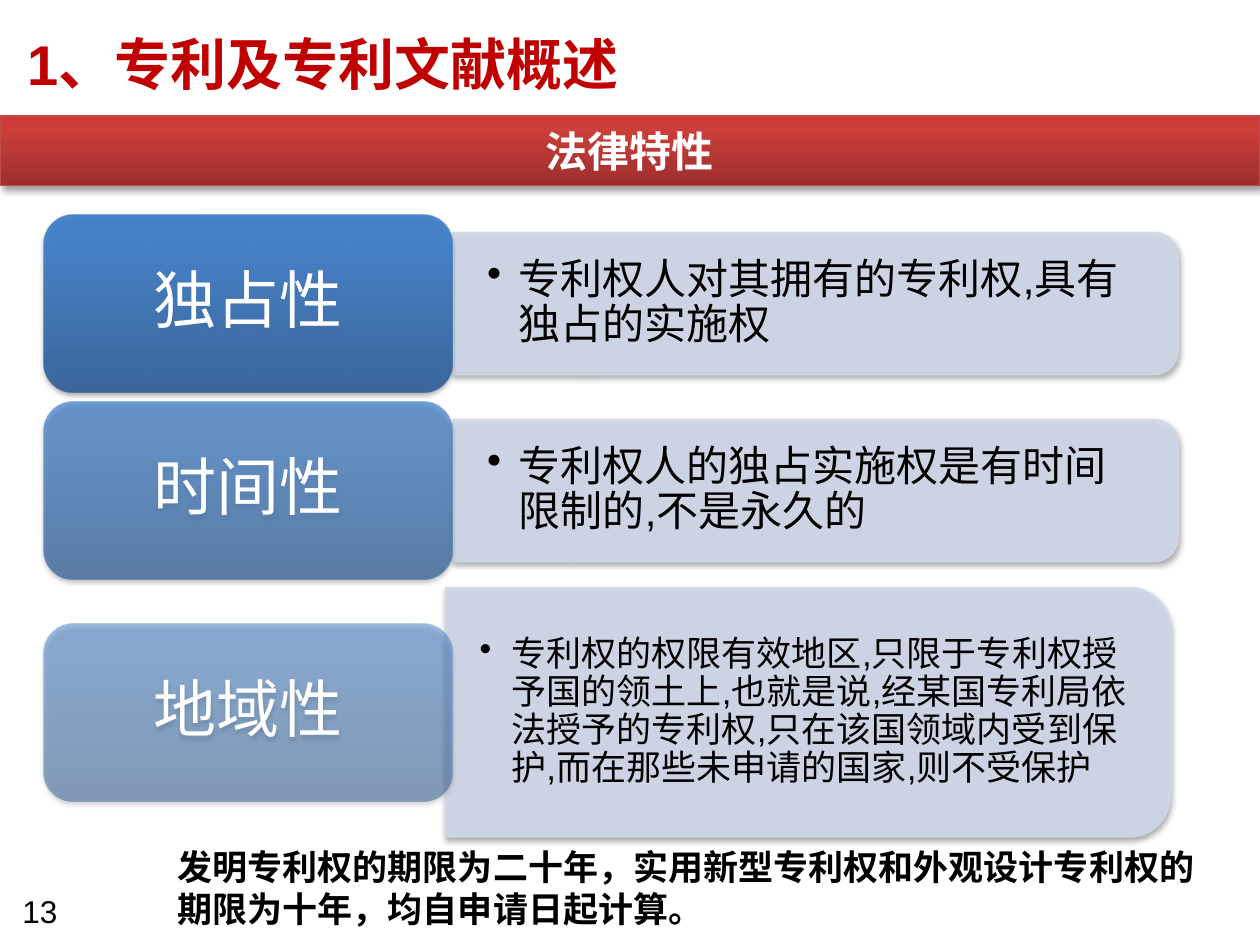
"""Build the slide on the legal traits of patents."""
from lxml import etree
from pptx import Presentation
from pptx.dml.color import RGBColor
from pptx.enum import shapes, text
from pptx.oxml import ns
from pptx.util import Cm, Pt

TITLE = "1、专利及专利文献概述"
BAR = "法律特性"
NOTE = "发明专利权的期限为二十年，实用新型专利权和外观设计专利权的期限为十年，均自申请日起计算。"
PAGE = "13"
ROWS = [
    dict(name="独占性", body="专利权人对其拥有的专利权,具有独占的实施权",
         mid=6.12, left=9.13, high=2.87, size=24, alpha=90),
    dict(name="时间性", body="专利权人的独占实施权是有时间限制的,不是永久的",
         mid=9.89, left=9.13, high=2.87, size=24, alpha=70),
    dict(name="地域性", body="专利权的权限有效地区,只限于专利权授予国的领土上,也就是说,"
         "经某国专利局依法授予的专利权,只在该国领域内受到保护,而在那些未申请的国家,则不受保护",
         mid=14.36, left=8.98, high=5.03, size=20, alpha=50),
]
RED = [(0, "9C2F2D"), (80, "CB3E3A"), (100, "CE3B37")]
BLUE = [(0, "2F5F99"), (80, "3D7CC7"), (100, "3A7CCB")]
PALE = "D0D8E8"
WIDE, TALL = 25.4, 19.05
PANEL = 14.62
LABEL = (0.89, 8.23, 3.58)
SOFT = (3.1, 1.8, 90, 35)
HARD = (4, 3, 45, 40)
CJK = "Noto Sans CJK SC"
KIND = shapes.MSO_SHAPE
MID = text.MSO_ANCHOR.MIDDLE
MAIN = ns.nsdecls("a")


def rgb(code):
    return RGBColor.from_string(code)


def tint(code, alpha):
    return f'<a:srgbClr val="{code}"><a:alpha val="{alpha * 1000}"/></a:srgbClr>'


def node(xml):
    return etree.fromstring(xml)


def shade(shape, stops, alpha=100):
    shape.fill.background()
    old = shape._element.spPr.find(ns.qn("a:noFill"))
    gs = "".join(f'<a:gs pos="{pos * 1000}">{tint(code, alpha)}</a:gs>'
                 for pos, code in stops)
    old.getparent().replace(old, node(
        f'<a:gradFill {MAIN} rotWithShape="1"><a:gsLst>{gs}</a:gsLst>'
        '<a:lin ang="16200000" scaled="0"/></a:gradFill>'))


def edge(shape, code):
    shape.line.color.rgb = rgb(code)
    shape.line.width = Pt(0.75)


def cast(shape, blur, dist, ang, alpha):
    shape.shadow.inherit = False
    shape._element.spPr.find(ns.qn("a:effectLst")).append(node(
        f'<a:outerShdw {MAIN} blurRad="{Pt(blur)}" dist="{Pt(dist)}" '
        f'dir="{ang * 60000}" rotWithShape="0">{tint("000000", alpha)}</a:outerShdw>'))


def write(shape, words, size, code="000000", bold=False, face="Arial",
          pad=(0.25, 0.13), anchor=MID, align=None, dot=False, space=None):
    frame = shape.text_frame
    frame.word_wrap = True
    frame.vertical_anchor = anchor
    frame.margin_left = frame.margin_right = Cm(pad[0])
    frame.margin_top = frame.margin_bottom = Cm(pad[1])
    frame.text = words
    para = frame.paragraphs[0]
    if dot:
        prop = para._p.get_or_add_pPr()
        prop.set("marL", str(Cm(0.64)))
        prop.set("indent", str(-Cm(0.64)))
        prop.append(node(f'<a:buChar {MAIN} char="•"/>'))
    para.alignment = align or text.PP_ALIGN.LEFT
    para.line_spacing = space
    run = para.runs[0]
    run.font.size, run.font.bold, run.font.name = Pt(size), bold, face
    run.font.color.rgb = rgb(code)
    run.font._element.append(node(f'<a:ea {MAIN} typeface="{CJK}"/>'))
    return run


def box(slide, left, top, wide, high):
    return slide.shapes.add_textbox(Cm(left), Cm(top), Cm(wide), Cm(high))


def block(slide, kind, left, top, wide, high):
    return slide.shapes.add_shape(kind, Cm(left), Cm(top), Cm(wide), Cm(high))


def row(slide, item):
    mid, left, high = item["mid"], item["left"], item["high"]
    panel = block(slide, KIND.ROUND_2_SAME_RECTANGLE,
                  left + (PANEL - high) / 2, mid - PANEL / 2, high, PANEL)
    panel.rotation = 90
    panel.fill.solid()
    panel.fill.fore_color.rgb = rgb(PALE)
    edge(panel, PALE)
    for clr in panel._element.spPr.iter(ns.qn("a:srgbClr")):
        clr.append(node(f'<a:alpha {MAIN} val="90000"/>'))
    cast(panel, *SOFT)
    deep = high * 0.905
    body = box(slide, left, mid - deep / 2, PANEL - 0.18, deep)
    write(body, item["body"], item["size"], pad=(0.69, 0.36), dot=True, space=0.9)

    start, wide, tall = LABEL
    label = block(slide, KIND.ROUNDED_RECTANGLE, start, mid - tall / 2, wide, tall)
    shade(label, BLUE, item["alpha"])
    label.line.fill.background()
    cast(label, *SOFT)
    write(label, item["name"], 36, "FFFFFF", pad=(0.56, 0.36),
          align=text.PP_ALIGN.CENTER, space=0.9)


def main():
    deck = Presentation()
    deck.slide_width, deck.slide_height = Cm(WIDE), Cm(TALL)
    slide = deck.slides.add_slide(deck.slide_layouts[6])

    top = 2.34
    rule = slide.shapes.add_connector(
        shapes.MSO_CONNECTOR.STRAIGHT, 0, Cm(top), Cm(WIDE), Cm(top))
    edge(rule, "EAEAEA")
    rule._element.spPr.append(node(f"<a:effectLst {MAIN}/>"))
    write(box(slide, 0.2, 17.86, 1.78, 1.02), PAGE, 18, anchor=text.MSO_ANCHOR.TOP)

    bar = block(slide, KIND.RECTANGLE, 0, top, WIDE, 1.4)
    shade(bar, RED)
    edge(bar, "BF4C48")
    cast(bar, *HARD)
    write(bar, BAR, 24, "FFFFFF", True, CJK, align=text.PP_ALIGN.CENTER)

    for item in ROWS:
        row(slide, item)

    note = box(slide, 3.33, 16.92, 21.13, 1.96)
    write(note, NOTE, 20, bold=True, anchor=text.MSO_ANCHOR.TOP)
    note.text_frame.auto_size = text.MSO_AUTO_SIZE.SHAPE_TO_FIT_TEXT

    head = write(box(slide, 0.3, 0.25, 21.82, 2.06), TITLE, 32, "C00000", True)
    head.font._element.insert(0, node(
        f'<a:ln {MAIN} w="{Pt(0.75)}"><a:solidFill>{tint("C00000", 100)}'
        '</a:solidFill></a:ln>'))
    deck.save("out.pptx")


if __name__ == "__main__":
    main()
